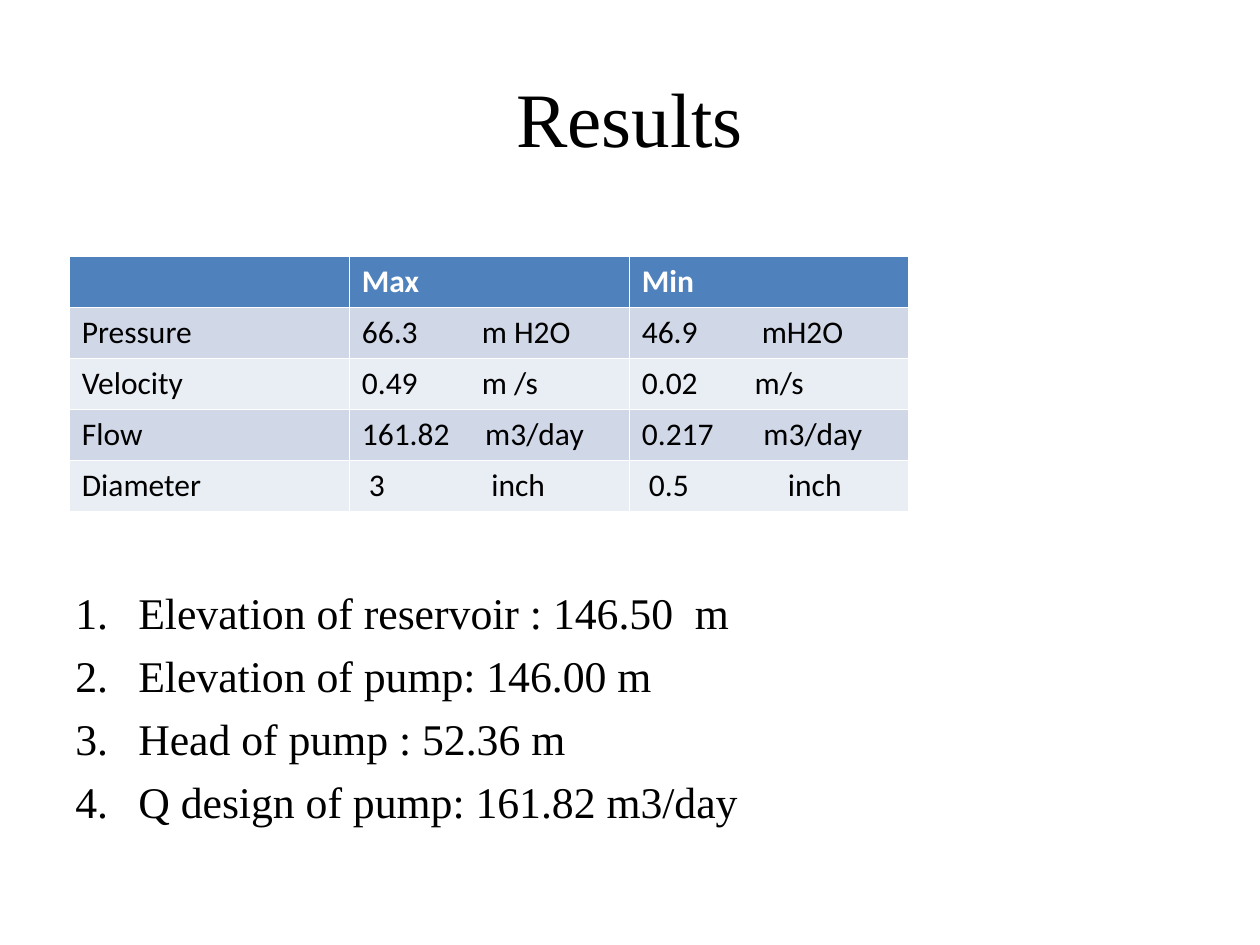
from lxml.etree import SubElement
from pptx import Presentation
from pptx.dml.color import RGBColor
from pptx.enum.text import MSO_ANCHOR, PP_ALIGN
from pptx.oxml.ns import qn
from pptx.util import Pt

BLACK = RGBColor(0x00, 0x00, 0x00)
WHITE = RGBColor(0xFF, 0xFF, 0xFF)
HEADER_BLUE = RGBColor(0x4F, 0x81, 0xBD)
BAND_COLORS = [RGBColor(0xE9, 0xED, 0xF4), RGBColor(0xD0, 0xD8, 0xE8)]


def add_run(paragraph, text, size, font, color, bold=False):
    run = paragraph.add_run()
    run.text = text
    run.font.size = Pt(size)
    run.font.name = font
    run.font.color.rgb = color
    run.font.bold = bold


presentation = Presentation()
presentation.slide_width = Pt(720)
presentation.slide_height = Pt(540)
slide = presentation.slides.add_slide(presentation.slide_layouts[5])

# Title
title = slide.shapes.title
title.left, title.top, title.width, title.height = Pt(36), Pt(21.6), Pt(648), Pt(90)
title.text_frame.vertical_anchor = MSO_ANCHOR.MIDDLE
paragraph = title.text_frame.paragraphs[0]
paragraph.alignment = PP_ALIGN.CENTER
add_run(paragraph, "Results", 44, "Times New Roman", BLACK)

# Results table: each value is (text, tab stop of its unit in points)
rows = [
    [("", 0), ("Max", 0), ("Min", 0)],
    [("Pressure", 0), ("66.3\tm H2O", 68.5), ("46.9\tmH2O", 68.5)],
    [("Velocity", 0), ("0.49\tm /s", 68.5), ("0.02\tm/s", 64.5)],
    [("Flow", 0), ("161.82\tm3/day", 70.5), ("0.217\tm3/day", 69.5)],
    [("Diameter", 0), (" 3\tinch", 74), (" 0.5\tinch", 83.5)],
]
table = slide.shapes.add_table(
    len(rows), 3, Pt(39.6), Pt(146.4), Pt(480), Pt(146)
).table
for row_index, row in enumerate(rows):
    is_header = row_index == 0
    for column_index, (text, tab_position) in enumerate(row):
        cell = table.cell(row_index, column_index)
        cell.fill.solid()
        cell.fill.fore_color.rgb = HEADER_BLUE if is_header else BAND_COLORS[row_index % 2]
        if not text:
            continue
        paragraph = cell.text_frame.paragraphs[0]
        add_run(paragraph, text, 18, "Calibri", WHITE if is_header else BLACK, is_header)
        if tab_position:
            tab_list = SubElement(paragraph._p.get_or_add_pPr(), qn("a:tabLst"))
            SubElement(tab_list, qn("a:tab"), pos=str(Pt(tab_position)), algn="l")

# Numbered list of pump data
pump_data = [
    "Elevation of reservoir : 146.50  m",
    "Elevation of pump: 146.00 m",
    "Head of pump : 52.36 m",
    "Q design of pump: 161.82 m3/day",
]
text_frame = slide.shapes.add_textbox(Pt(36), Pt(331), Pt(648), Pt(144)).text_frame
text_frame.word_wrap = True
for index, text in enumerate(pump_data):
    paragraph = text_frame.add_paragraph() if index else text_frame.paragraphs[0]
    paragraph.space_after = Pt(6)
    add_run(paragraph, text, 25, "Times New Roman", BLACK)
    properties = paragraph._p.get_or_add_pPr()
    properties.set("marL", str(Pt(36)))
    properties.set("indent", str(-Pt(36)))
    SubElement(properties, qn("a:buFont"), typeface="+mj-lt")
    SubElement(properties, qn("a:buAutoNum"), type="arabicPeriod")

presentation.save("out.pptx")
